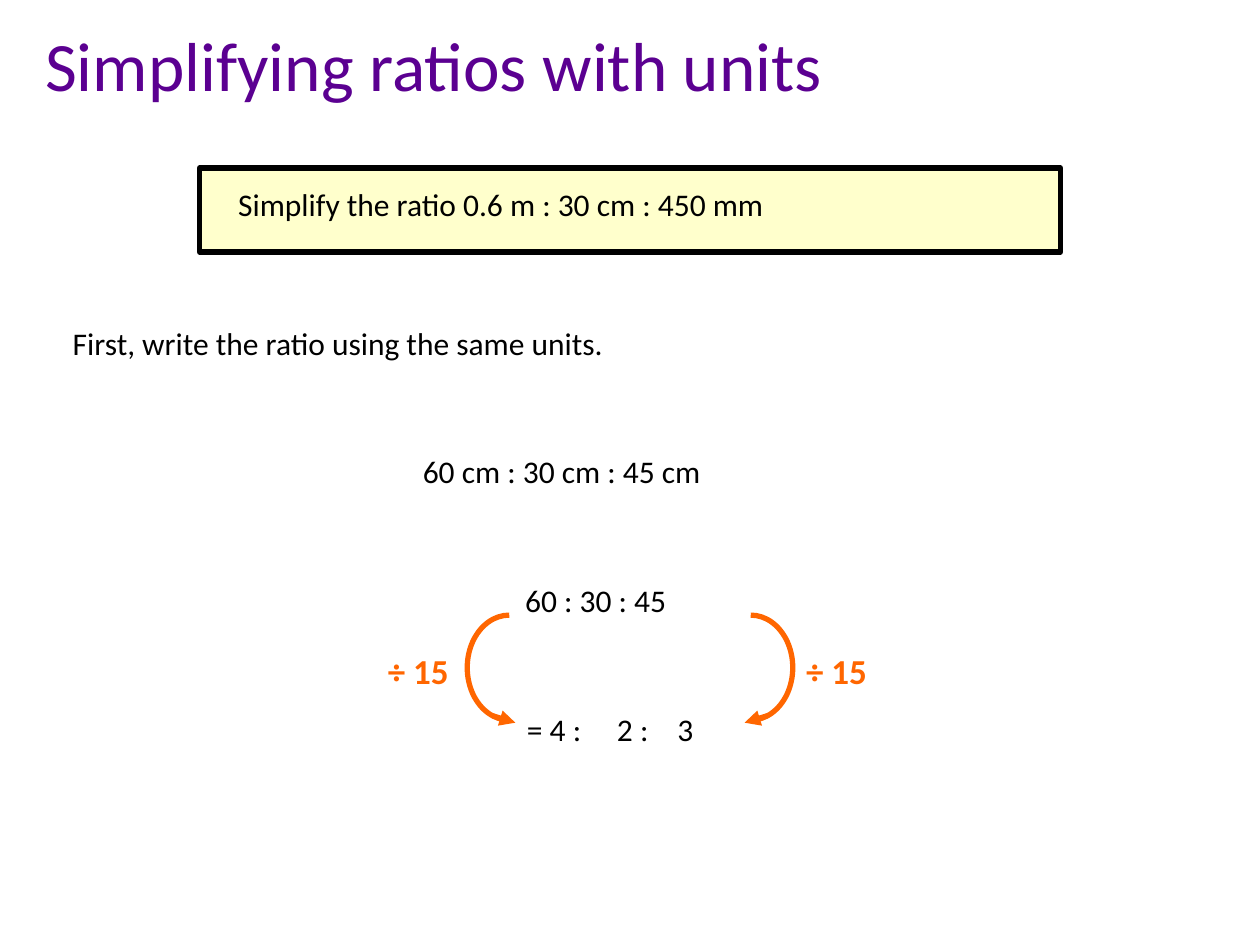
from lxml import etree
from pptx import Presentation
from pptx import util as u
from pptx.dml.color import RGBColor
from pptx.enum import shapes, text
from pptx.oxml.ns import qn

COLORS = {"title": "5B0091", "text": "000000", "panel": "FFFFCC", "accent": "FF6600"}
FONT = "Calibri"
SLIDE_W, SLIDE_H = 720, 540
TITLE = ("Simplifying ratios with units", 11.5, 12.5, 473, 48)
QUESTION = ("Simplify the ratio 0.6 m : 30 cm : 450 mm", 129, 102, 462, 36)
PANEL = (114, 96, 492, 48)
STEPS = [
    [("First, write the ratio using the same units.", 34.5, 452)],
    [("60 cm : 30 cm : 45 cm", 234.5, 251)],
    [("60 : 30 : 45", 293, 135)],
    [("= 4 :", 294, 62), ("2 :", 345.5, 41), ("3", 380, 28)],
]
STEP_TOP, STEP_GAP, STEP_H = 181.5, 73.5, 36
DIVISOR = "÷ 15"
DIVISOR_LEFTS = (214.5, 453.5)
BRACKET = (267, 351.5, 24, 60)
ARROW = (281.5, 409, 294.5, 413)


def pts(*values):
    return [u.Pt(v) for v in values]


def rgb(name):
    return RGBColor.from_string(COLORS[name])


def add_text(s, words, x, y, w, h, size=18, color="text", bold=False):
    sp = s.shapes.add_textbox(*pts(x, y, w, h))
    tf = sp.text_frame
    tf.word_wrap = True
    p = tf.paragraphs[0]
    p.text = words
    p.font.name, p.font.size, p.font.bold = FONT, u.Pt(size), bold
    p.font.color.rgb = rgb(color)
    return sp


def set_line(sp, color):
    sp.line.color.rgb = rgb(color)
    sp.line.width = u.Pt(3)


def add_division(s, mirrored):
    x, y, w, h = BRACKET
    x1, y1, x2, y2 = ARROW
    kind = shapes.MSO_SHAPE.LEFT_BRACKET
    if mirrored:
        x, x1, x2 = SLIDE_W - x - w, SLIDE_W - x1, SLIDE_W - x2
        kind = shapes.MSO_SHAPE.RIGHT_BRACKET
    bracket = s.shapes.add_shape(kind, *pts(x, y, w, h))
    bracket.adjustments[0] = h / w / 2
    bracket.shadow.inherit = False
    bracket.fill.background()
    set_line(bracket, "accent")

    arrow = s.shapes.add_connector(shapes.MSO_CONNECTOR.STRAIGHT, *pts(x1, y1, x2, y2))
    set_line(arrow, "accent")
    etree.SubElement(arrow.line._get_or_add_ln(), qn("a:tailEnd"), type="triangle")
    etree.SubElement(arrow._element.spPr, qn("a:effectLst"))

    add_text(s, DIVISOR, DIVISOR_LEFTS[mirrored], 367.5, 53.5, 31, 20, "accent", True)


prs = Presentation()
prs.slide_width, prs.slide_height = pts(SLIDE_W, SLIDE_H)
s = prs.slides.add_slide(prs.slide_layouts[6])

title = add_text(s, *TITLE, size=39.6, color="title")
title.text_frame.vertical_anchor = text.MSO_ANCHOR.MIDDLE
title.text_frame.paragraphs[0].alignment = text.PP_ALIGN.CENTER

panel = s.shapes.add_shape(shapes.MSO_SHAPE.RECTANGLE, *pts(*PANEL))
panel.shadow.inherit = False
panel.fill.solid()
panel.fill.fore_color.rgb = rgb("panel")
set_line(panel, "text")
add_text(s, *QUESTION)

for i, parts in enumerate(STEPS):
    for words, x, w in parts:
        add_text(s, words, x, STEP_TOP + i * STEP_GAP, w, STEP_H)

for mirrored in (False, True):
    add_division(s, mirrored)

prs.save("out.pptx")
